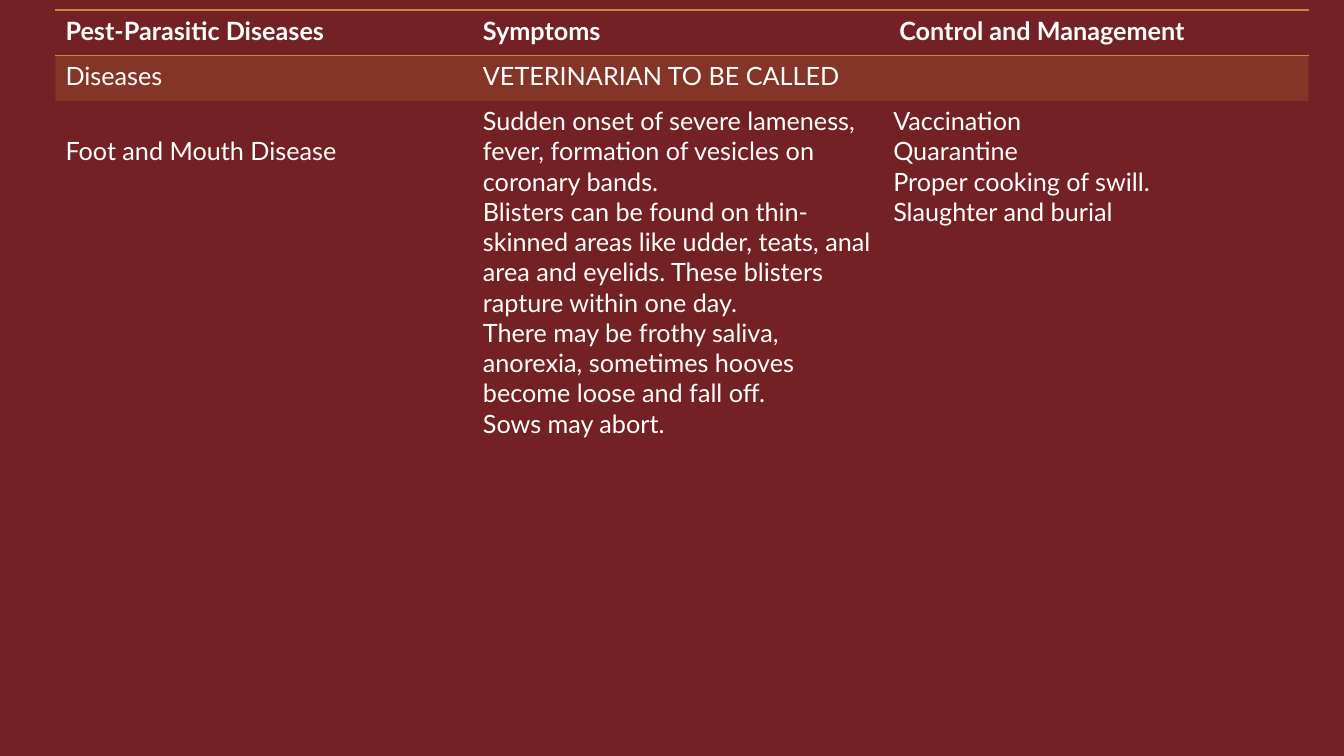
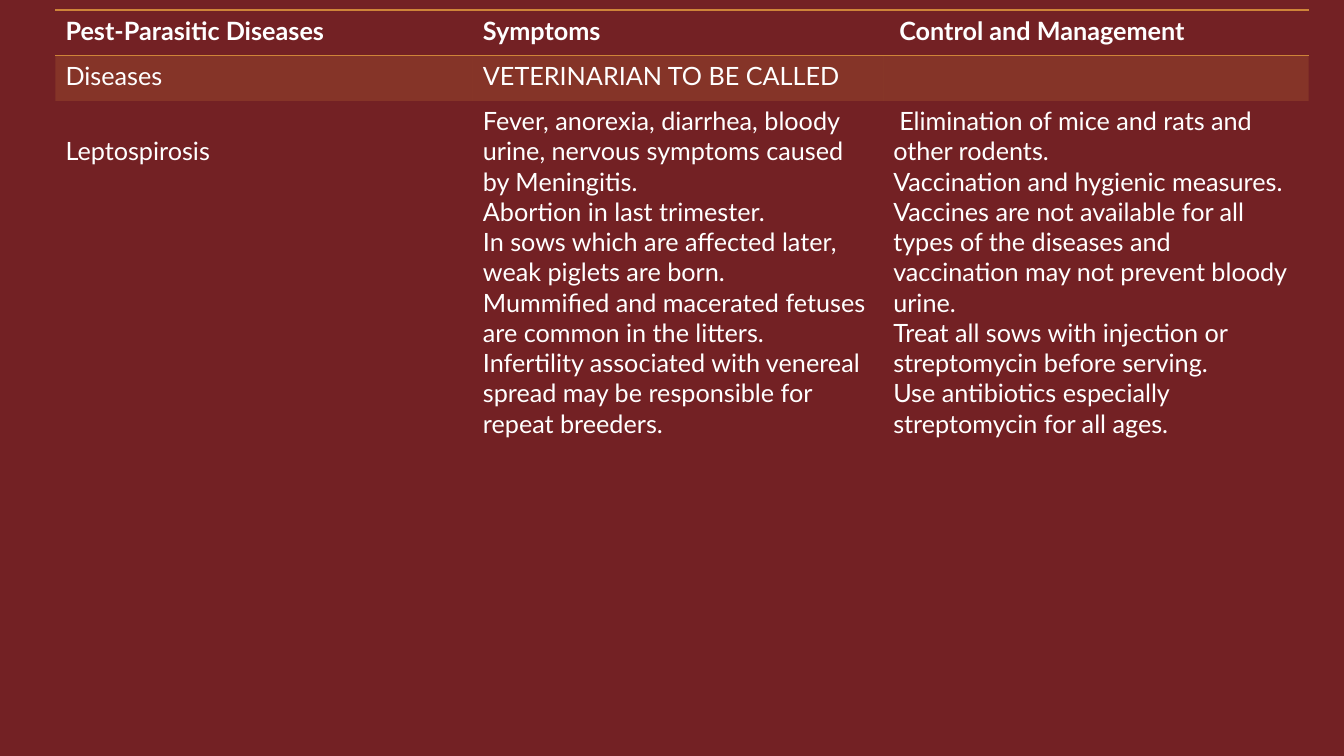
"""Build two slides of pig disease tables."""
from lxml import etree
from pptx import Presentation
from pptx.dml.color import RGBColor
from pptx.oxml.ns import qn
from pptx.util import Inches, Pt

FONT = "Lato"
TEXT_SIZE = Pt(18)
BACKGROUND = "732124"
ACCENT = "CE8439"
WHITE = "FFFFFF"
BAND_OPACITY = 20
NO_STYLE_NO_GRID = "{2D5ABB26-0587-4C30-8999-92F81FD0307C}"

TABLE_BOX = (0.55, 0.1, 12.43, 8.13)
COLUMN_WIDTHS = (4.14, 4.07, 4.22)
ROW_HEIGHTS = (0.45, 0.45, 7.23)
FIRST_LINE_INDENT = 0.06
DISEASE_TOP_MARGIN = 0.35

HEADERS = ("Pest-Parasitic Diseases", "Symptoms", "Control and Management")
BAND = ("Diseases", "VETERINARIAN TO BE CALLED", "")

DISEASES = [
    {
        "name": "Foot and Mouth Disease",
        "symptoms": [
            "Sudden onset of severe lameness, fever, formation of vesicles on coronary bands.",
            "Blisters can be found on thin-skinned areas like udder, teats, anal area and "
            "eyelids. These blisters rapture within one day.",
            "There may be frothy saliva, anorexia, sometimes hooves become loose and fall off.",
            "Sows may abort.",
        ],
        "control": [
            "Vaccination",
            "Quarantine",
            "Proper cooking of swill.",
            "Slaughter and burial",
        ],
        "control_indent": 0,
    },
    {
        "name": "Leptospirosis",
        "symptoms": [
            "Fever, anorexia, diarrhea, bloody urine, nervous symptoms caused by Meningitis.",
            "Abortion in last trimester.",
            "In sows which are affected later, weak piglets are born.",
            "Mummified and macerated fetuses are common in the litters.",
            "Infertility associated with venereal spread may be responsible for repeat breeders.",
        ],
        "control": [
            "Elimination of mice and rats and other rodents.",
            "Vaccination and hygienic measures. Vaccines are not available for all types of "
            "the diseases and vaccination may not prevent bloody urine.",
            "Treat all sows with injection or streptomycin before serving.",
            "Use antibiotics especially streptomycin for all ages.",
        ],
        "control_indent": FIRST_LINE_INDENT,
    },
]


def color(hex_string):
    """Turn a hex string into a colour."""
    return RGBColor.from_string(hex_string)


def write_cell(cell, lines, bold=False, indent=0):
    """Write one paragraph per line, indenting the first line of the first."""
    frame = cell.text_frame
    frame.text = "\n".join(lines)
    for paragraph in frame.paragraphs:
        font = paragraph.font
        font.name, font.size, font.bold = FONT, TEXT_SIZE, bold
        font.color.rgb = color(WHITE)
    if indent:
        properties = frame.paragraphs[0]._p.get_or_add_pPr()
        properties.set("indent", str(Inches(indent)))


def fill_band(cell):
    """Fill a cell with the translucent accent colour."""
    cell.fill.solid()
    cell.fill.fore_color.rgb = color(ACCENT)
    swatch = cell._tc.tcPr.find(".//" + qn("a:srgbClr"))
    etree.SubElement(swatch, qn("a:alpha"), val=str(BAND_OPACITY * 1000))


def add_rules(cell, sides):
    """Draw accent rules on the given sides, listed in schema order."""
    properties = cell._tc.get_or_add_tcPr()
    for position, side in enumerate(sides):
        rule = etree.Element(qn("a:" + side), w=str(Pt(1)))
        fill = etree.SubElement(rule, qn("a:solidFill"))
        etree.SubElement(fill, qn("a:srgbClr"), val=ACCENT)
        properties.insert(position, rule)


def add_disease_table(slide, box, disease):
    """Add the table of one disease in the given box."""
    lengths = [Inches(value) for value in box]
    table = slide.shapes.add_table(len(ROW_HEIGHTS), len(COLUMN_WIDTHS), *lengths).table
    table.first_row = table.horz_banding = False
    table._tbl.tblPr.find(qn("a:tableStyleId")).text = NO_STYLE_NO_GRID
    for column, width in zip(table.columns, COLUMN_WIDTHS):
        column.width = Inches(width)
    for row, height in zip(table.rows, ROW_HEIGHTS):
        row.height = Inches(height)

    header_indents = (0, 0, FIRST_LINE_INDENT)
    body = ([disease["name"]], disease["symptoms"], disease["control"])
    body_indents = (0, 0, disease["control_indent"])
    for index in range(len(COLUMN_WIDTHS)):
        header, band, detail = (table.cell(row, index) for row in range(len(ROW_HEIGHTS)))
        write_cell(header, [HEADERS[index]], bold=True, indent=header_indents[index])
        write_cell(band, [BAND[index]])
        write_cell(detail, body[index], indent=body_indents[index])
        header.fill.background()
        fill_band(band)
        detail.fill.background()
        add_rules(header, ("lnT", "lnB"))
        add_rules(detail, ("lnB",))
    table.cell(2, 0).margin_top = Inches(DISEASE_TOP_MARGIN)


def main():
    """Build and save the presentation."""
    presentation = Presentation()
    presentation.slide_width = Inches(13.33)
    presentation.slide_height = Inches(7.5)
    background = presentation.slide_master.background.fill
    background.solid()
    background.fore_color.rgb = color(BACKGROUND)
    blank_layout = presentation.slide_layouts.get_by_name("Blank")
    for disease in DISEASES:
        slide = presentation.slides.add_slide(blank_layout)
        add_disease_table(slide, TABLE_BOX, disease)
    presentation.save("out.pptx")


if __name__ == "__main__":
    main()
